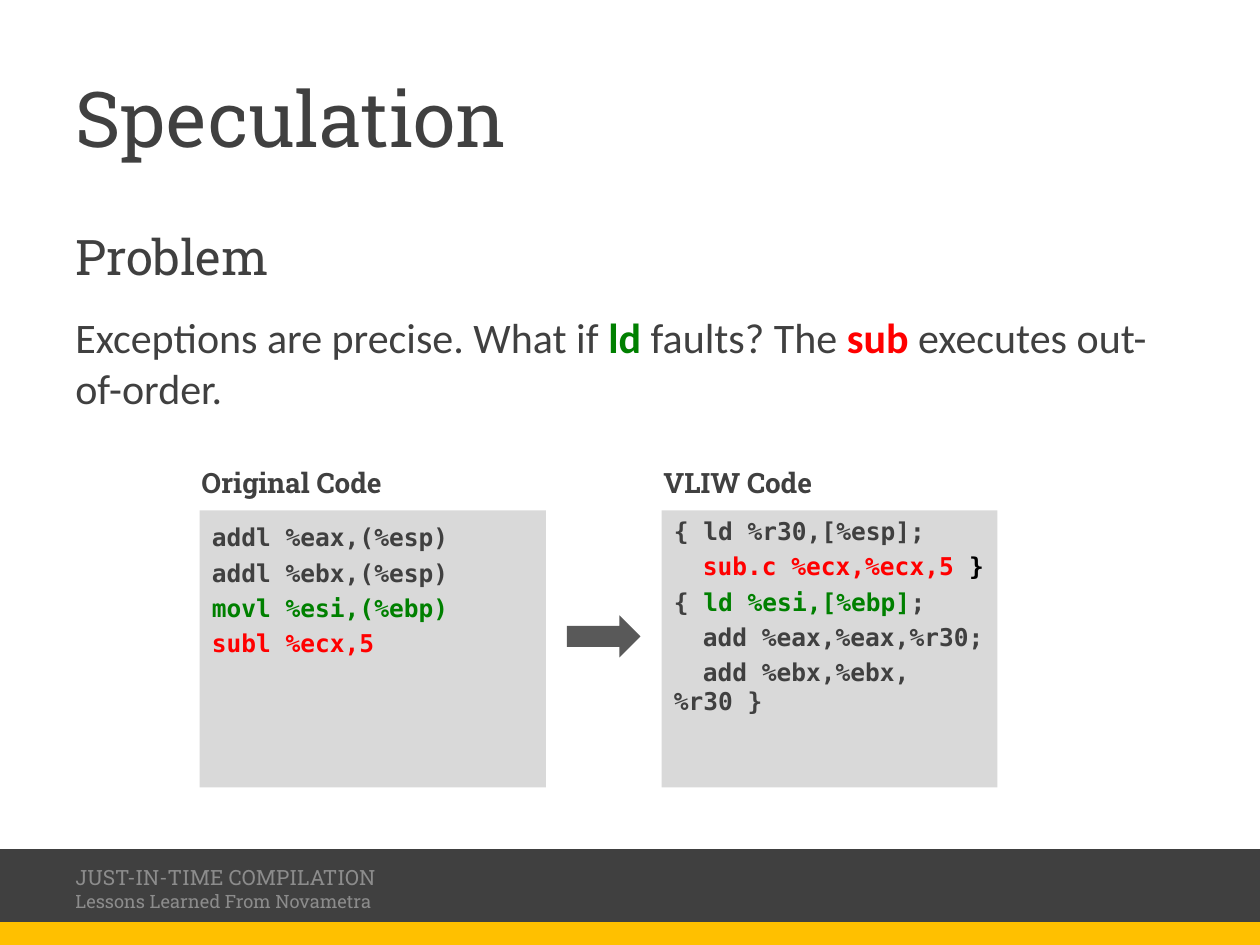
from pptx import Presentation
from pptx.dml.color import RGBColor
from pptx.enum.shapes import MSO_SHAPE as Shape
from pptx.enum.text import MSO_ANCHOR as Anchor, MSO_AUTO_SIZE as AutoSize, PP_ALIGN as Align
from pptx.util import Inches, Pt

COLUMNS, ROWS = 120, 90
WIDTH, HEIGHT = Inches(10), Inches(7.5)
DARK, GREEN, RED, BLACK = "404040", "008000", "FF0000", "000000"
SLAB, BODY, MONO = "Roboto Slab", "Calibri", "DejaVu Sans Mono"
CODE = {"name": MONO, "size": Pt(14), "bold": True}
HEADING = {"name": SLAB, "size": Pt(16), "bold": True}
CODE_INDENT = Inches(0.23)
HEADING_ROWS = 4.9


def color(value):
    return RGBColor.from_string(value)


def place(box):
    left, top, width, height = box
    return (round(left * WIDTH / COLUMNS), round(top * HEIGHT / ROWS),
            round(width * WIDTH / COLUMNS), round(height * HEIGHT / ROWS))


def apply(target, values):
    for name, value in values.items():
        setattr(target, name, value)


def add_block(page, kind, box, fill, line_width=0):
    block = page.shapes.add_shape(kind, *place(box))
    block.shadow.inherit = False
    block.fill.solid()
    block.fill.fore_color.rgb = color(fill)
    if line_width:
        block.line.color.rgb = color(fill)
        block.line.width = Pt(line_width)
    else:
        block.line.fill.background()
    return block


def add_label(page, box, **frame_format):
    label = page.shapes.add_textbox(*place(box))
    apply(label.text_frame, {"word_wrap": True, **frame_format})
    return label.text_frame


def write(para, spans, font, **para_format):
    apply(para, {"alignment": Align.LEFT, **para_format})
    for text, tint, *changes in spans:
        for index, line in enumerate(text.split("\n")):
            if index:
                para.add_line_break()
            if line:
                span = para.add_run()
                span.text = line
                apply(span.font, {**font, **(changes[0] if changes else {})})
                span.font.color.rgb = color(tint)


def add_footer(page, box):
    left, top, width, height = box
    add_block(page, Shape.RECTANGLE, box, DARK, 2)
    add_block(page, Shape.RECTANGLE, (left, top + 7, width, height - 7), "FFC000", 2)
    frame = add_label(page, (left + 6, top + 1.2, 73, 4.8), vertical_anchor=Anchor.MIDDLE)
    write(frame.paragraphs[0], [
        ("JUST-IN-TIME COMPILATION\n", "8C8C8C"),
        ("Lessons Learned From Novametra", "8C8C8C", {"size": Pt(10.5)}),
    ], {"name": SLAB, "size": Pt(12)})


def add_title(page, box):
    frame = add_label(page, box, vertical_anchor=Anchor.MIDDLE)
    write(frame.paragraphs[0], [("Speculation", DARK)], {"name": SLAB, "size": Pt(44)})


def add_problem(page, box):
    frame = add_label(page, box)
    write(frame.paragraphs[0], [("Problem", DARK)], {"name": SLAB, "size": Pt(28)})
    strong = {"bold": True}
    write(frame.add_paragraph(), [
        ("Exceptions are precise. What if ", DARK),
        ("ld", GREEN, strong),
        (" faults? The ", DARK),
        ("sub ", RED, strong),
        ("executes out-of-order.", DARK),
    ], {"name": BODY, "size": Pt(24), "bold": False}, space_before=Pt(15))


def add_code_panel(page, box, heading, heading_width, lines, **para_format):
    left, top, width, height = box
    panel = add_block(page, Shape.RECTANGLE,
                      (left, top + HEADING_ROWS, width, height - HEADING_ROWS), "D9D9D9")
    frame = panel.text_frame
    apply(frame, {"word_wrap": True, "vertical_anchor": Anchor.TOP})
    for index, (indent, spans) in enumerate(lines):
        para = frame.add_paragraph() if index else frame.paragraphs[0]
        write(para, spans, CODE, **para_format)
        if indent:
            properties = para._p.get_or_add_pPr()
            properties.set("marL", "0")
            properties.set("indent", str(CODE_INDENT))
    label = add_label(page, (left - 1, top, heading_width, 4.4),
                      word_wrap=False, auto_size=AutoSize.SHAPE_TO_FIT_TEXT)
    write(label.paragraphs[0], [(heading, DARK)], HEADING)


def add_comparison(page, box):
    left, top, width, height = box
    add_code_panel(page, (left, top, 33, height), "Original Code", 21.2, [
        (False, [
            ("addl %eax,(%esp)\naddl %ebx,(%esp)\n", DARK),
            ("movl %esi,(%ebp)\n", GREEN),
            ("subl %ecx,5", RED),
        ]),
    ], line_spacing=1.2)
    add_block(page, Shape.RIGHT_ARROW, (left + 35, top + 14.9, 7, 4), "595959")
    add_code_panel(page, (left + width - 32, top, 32, height), "VLIW Code", 17.4, [
        (False, [("{ ld %r30,[%esp];", DARK)]),
        (True, [("sub.c %ecx,%ecx,5 ", RED), ("}", BLACK)]),
        (False, [("{ ", DARK), ("ld %esi,[%ebp]", GREEN), (";", DARK)]),
        (True, [("add %eax,%eax,%r30;", DARK)]),
        (True, [("add %ebx,%ebx,%r30 }", DARK)]),
    ], space_before=Pt(3.2))


def main():
    deck = Presentation()
    apply(deck, {"slide_width": WIDTH, "slide_height": HEIGHT})
    page = deck.slides.add_slide(deck.slide_layouts[6])
    add_footer(page, (0, 81, COLUMNS, 9))
    add_title(page, (6, 3.6, 108, 15))
    add_comparison(page, (19, 43.7, 76, 31.3))
    add_problem(page, (6, 21, 108, 59.4))
    deck.save("out.pptx")


if __name__ == "__main__":
    main()
